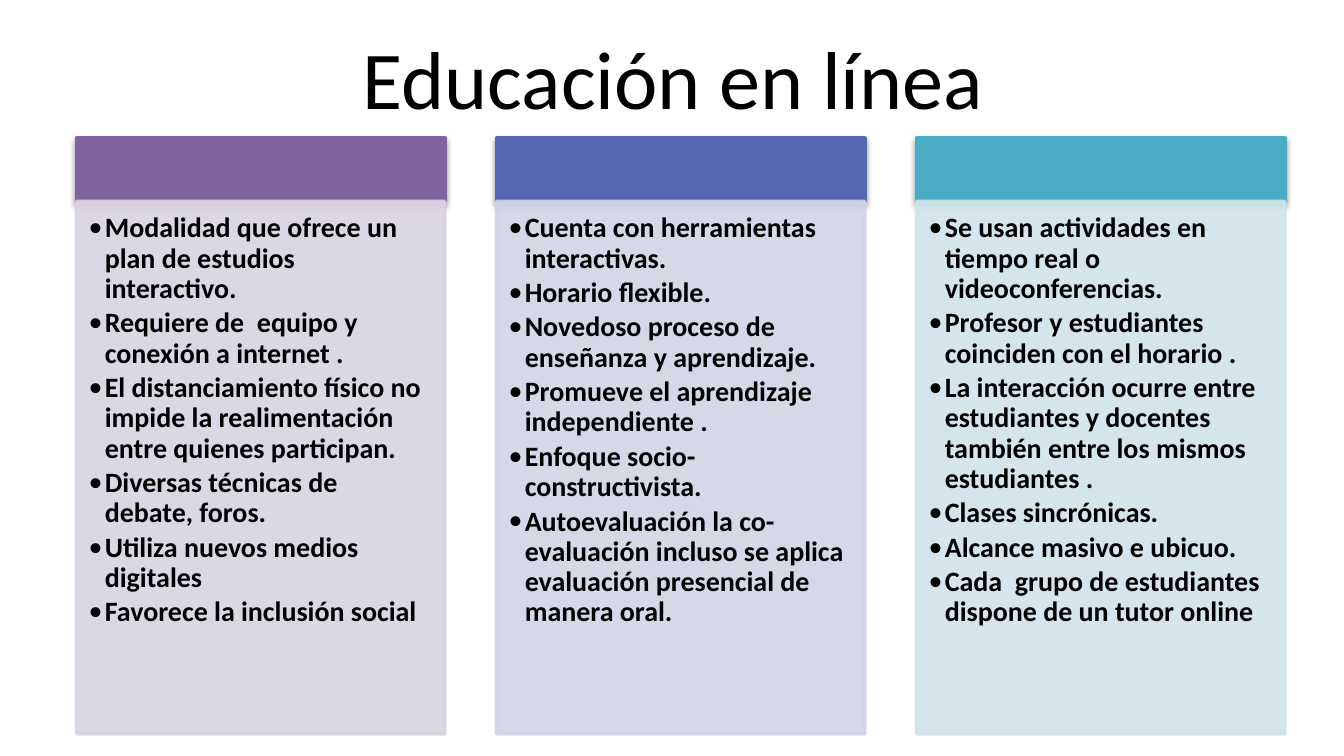
import pptx
import pptx.util
import pptx.dml.color
import pptx.enum.shapes
import pptx.enum.text
import pptx.oxml
import pptx.oxml.ns

Inches, Pt = pptx.util.Inches, pptx.util.Pt

# Content
TITLE = "Educación en línea"
COLUMNS = [
    {"header": "8064A2", "panel": "D8D3E0", "items": [
        "Modalidad que ofrece un plan de estudios interactivo.",
        "Requiere de  equipo y conexión a internet .",
        "El distanciamiento físico no impide la realimentación entre quienes participan.",
        "Diversas técnicas de debate, foros.",
        "Utiliza nuevos medios digitales",
        "Favorece la inclusión social"]},
    {"header": "5767B4", "panel": "D1D4E5", "items": [
        "Cuenta con herramientas interactivas.",
        "Horario flexible.",
        "Novedoso proceso de enseñanza y aprendizaje.",
        "Promueve el aprendizaje independiente .",
        "Enfoque socio-constructivista.",
        "Autoevaluación la co-evaluación incluso se aplica evaluación presencial de manera oral."]},
    {"header": "4BACC6", "panel": "D0E3EA", "items": [
        "Se usan actividades en tiempo real o videoconferencias.",
        "Profesor y estudiantes coinciden con el horario .",
        "La interacción ocurre entre estudiantes y docentes también entre los mismos estudiantes .",
        "Clases sincrónicas.",
        "Alcance masivo e ubicuo.",
        "Cada  grupo de estudiantes dispone de un tutor online"]},
]

# Grid, in inches, on a 16:9 slide
SLIDE_WIDTH = 10
SLIDE_HEIGHT = SLIDE_WIDTH * 9 / 16
LEFT, RIGHT, TOP, COLUMN_WIDTH = 0.57, 9.56, 1.03, 2.74
COLUMN_STEP = (RIGHT - LEFT - COLUMN_WIDTH) / (len(COLUMNS) - 1)
HEADER_HEIGHT, PANEL_HEIGHT = 0.47, 3.96
INDENT = 0.12


def color(value):
    return pptx.dml.color.RGBColor.from_string(value)


def add_xml(parent, tag_xml):
    declaration = pptx.oxml.ns.nsdecls("a")
    name, rest = tag_xml.split(" ", 1)
    parent.append(pptx.oxml.parse_xml(f"{name} {declaration} {rest}"))


def add_box(slide, left, top, height, fill):
    shape = slide.shapes.add_shape(
        pptx.enum.shapes.MSO_SHAPE.RECTANGLE,
        Inches(left), Inches(top), Inches(COLUMN_WIDTH), Inches(height))
    shape.shadow.inherit = False
    shape.fill.solid()
    shape.fill.fore_color.rgb = color(fill)
    shape.line.color.rgb = color(fill)
    shape.line.width = Pt(2)
    return shape


def add_header(slide, left, fill):
    shape = add_box(slide, left, TOP, HEADER_HEIGHT, fill)
    effects = shape._element.spPr.find(pptx.oxml.ns.qn("a:effectLst"))
    add_xml(effects, '<a:outerShdw blurRad="39370" dist="20320" dir="5400000" rotWithShape="0">'
                     '<a:srgbClr val="000000"><a:alpha val="38000"/></a:srgbClr></a:outerShdw>')


def set_font(paragraph, size, bold=False):
    paragraph.font.name = "Calibri"
    paragraph.font.size = Pt(size)
    paragraph.font.bold = bold
    paragraph.font.color.rgb = color("000000")


def add_panel(slide, left, fill, items):
    shape = add_box(slide, left, TOP + HEADER_HEIGHT, PANEL_HEIGHT, fill)
    for swatch in shape._element.spPr.iter(pptx.oxml.ns.qn("a:srgbClr")):
        add_xml(swatch, '<a:alpha val="90000"/>')

    frame = shape.text_frame
    frame.word_wrap = True
    frame.vertical_anchor = pptx.enum.text.MSO_ANCHOR.TOP
    frame.margin_left = frame.margin_top = Inches(0.09)
    frame.margin_right, frame.margin_bottom = Inches(0.12), Inches(0.13)
    frame.text = "\n".join(items)
    for paragraph in frame.paragraphs:
        paragraph.alignment = pptx.enum.text.PP_ALIGN.LEFT
        paragraph.line_spacing = 0.9
        paragraph.space_after = Pt(2.25)
        properties = paragraph._p.get_or_add_pPr()
        properties.set("marL", str(Inches(INDENT)))
        properties.set("indent", str(-Inches(INDENT)))
        add_xml(properties, '<a:buFont typeface="Calibri"/>')
        add_xml(properties, '<a:buChar char="•"/>')
        set_font(paragraph, 15, bold=True)


def main():
    presentation = pptx.Presentation()
    presentation.slide_width = Inches(SLIDE_WIDTH)
    presentation.slide_height = Inches(SLIDE_HEIGHT)
    slide = presentation.slides.add_slide(presentation.slide_layouts[6])

    # Title
    title = slide.shapes.add_textbox(Inches(0.51), Inches(0.1), Inches(9), Inches(0.94))
    frame = title.text_frame
    frame.word_wrap = True
    frame.vertical_anchor = pptx.enum.text.MSO_ANCHOR.MIDDLE
    frame.text = TITLE
    frame.paragraphs[0].alignment = pptx.enum.text.PP_ALIGN.CENTER
    set_font(frame.paragraphs[0], 44)

    # Columns: coloured header above a pale panel of bullets
    for index, column in enumerate(COLUMNS):
        left = LEFT + index * COLUMN_STEP
        add_header(slide, left, column["header"])
        add_panel(slide, left, column["panel"], column["items"])

    presentation.save("out.pptx")


if __name__ == "__main__":
    main()
